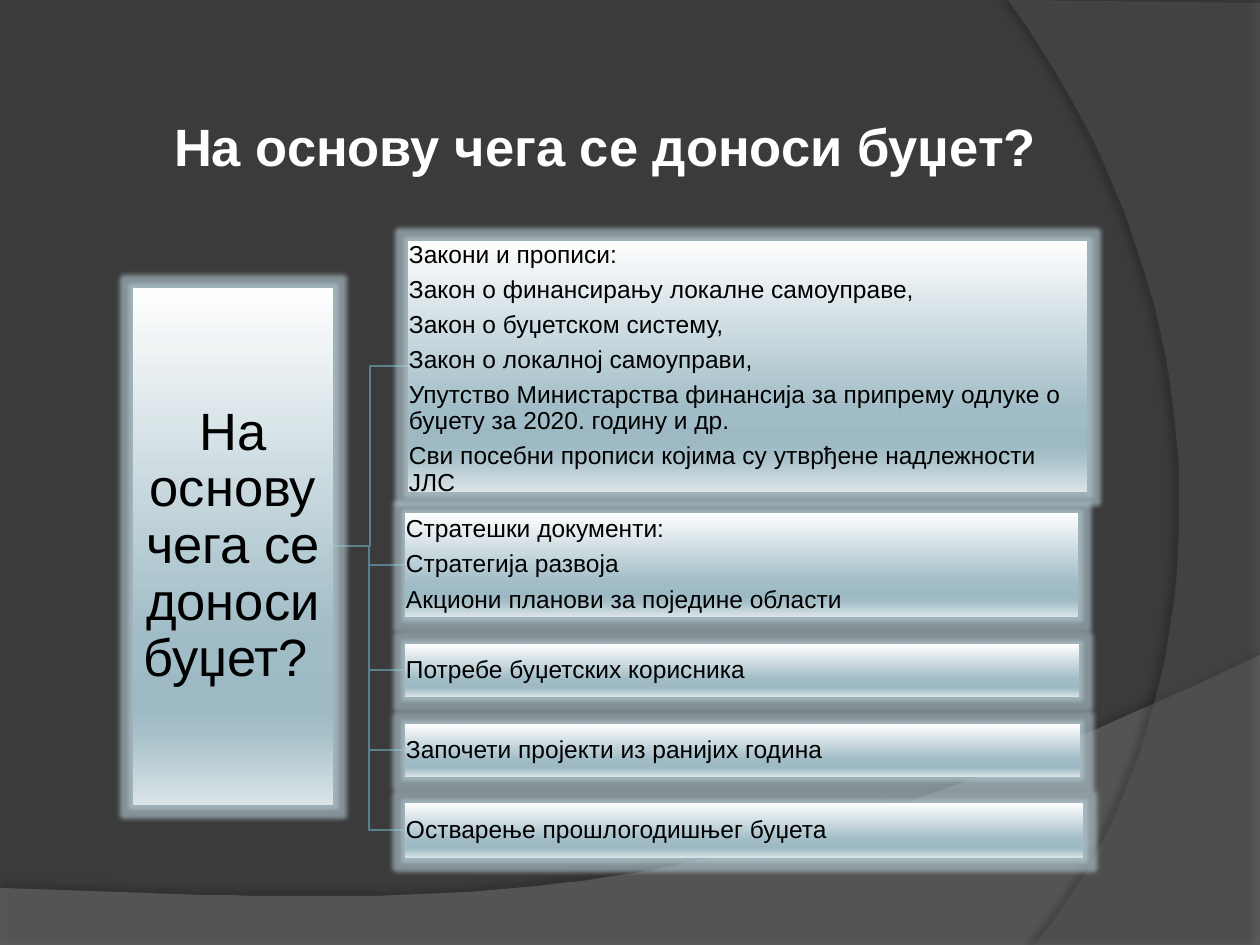
from dataclasses import dataclass

from lxml import etree
from pptx import Presentation
from pptx.dml.color import RGBColor
from pptx.enum import shapes, text
from pptx.oxml import ns
from pptx import util as u

SCALE = 914400 / 126
FONT = "Arial"
GRADIENT = [(0, "FEFEFE"), (68, "A0BCC6"), (81, "9CB9C4"), (86, "A7C0C9"), (100, "DAE4E7")]


@dataclass
class Box:
    left: int
    top: int
    width: int
    height: int
    lines: list[str]
    size: int = 14
    inset: int = 1
    align: text.PP_ALIGN = text.PP_ALIGN.LEFT
    anchor: text.MSO_ANCHOR = text.MSO_ANCHOR.MIDDLE

    @property
    def middle(self) -> int:
        return self.top + self.height // 2


@dataclass
class Swoosh:
    """A background shape: straight corners, then one Bezier curve from the last corner."""
    corners: list[tuple[int, int]]
    curve: list[tuple[int, int]]
    colour: str
    opacity: int
    shadow_opacity: int
    shadow_distance: float
    shadow_angle: int


SWOOSHES = [
    Swoosh([(0, 888), (0, 946), (1260, 946), (1260, 655)],
           [(704, 919), (493, 906), (0, 888)], "7F7F7F", 45, 35, 3.5, 270),
    Swoosh([(1260, 3), (1260, 945), (1034, 945)],
           [(1178, 780), (1283, 378), (1008, 0)], "5E5E5E", 40, 45, 4, 180),
]
TITLE = Box(168, 95, 990, 101, ["На основу чега се доноси буџет?"], size=30, inset=6)
ROOT = Box(133, 288, 200, 517, ["На основу чега се доноси буџет? "], size=30, inset=3,
           align=text.PP_ALIGN.CENTER)
BRANCHES = [
    Box(408, 241, 679, 251, [
        "Закони и прописи:",
        "Закон о финансирању локалне самоуправе,",
        "Закон о буџетском систему,",
        "Закон о локалној самоуправи,",
        "Упутство Министарства финансија за припрему одлуке о буџету за 2020. годину и др.",
        "Сви посебни прописи којима су утврђене надлежности ЈЛС",
    ], anchor=text.MSO_ANCHOR.TOP),
    Box(405, 513, 673, 104, [
        "Стратешки документи:",
        "Стратегија развоја",
        "Акциони планови за поједине области",
    ]),
    Box(405, 644, 674, 53, ["Потребе буџетских корисника"]),
    Box(405, 724, 675, 53, ["Започети пројекти из ранијих година"]),
    Box(405, 803, 678, 55, ["Остварење прошлогодишњег буџета"]),
]


def px(length: float) -> int:
    return round(length * SCALE)


def rgb(colour: str) -> RGBColor:
    return RGBColor.from_string(colour)


def add_xml(parent, tag: str, **attributes):
    child = etree.SubElement(parent, ns.qn(tag))
    for name, value in attributes.items():
        child.set(name, str(value))
    return child


def add_colour(parent, colour: str, opacity: int = 100) -> None:
    node = add_xml(parent, "a:srgbClr", val=colour)
    if opacity < 100:
        add_xml(node, "a:alpha", val=opacity * 1000)


def effects(shape):
    shape.shadow.inherit = False
    return shape._element.spPr.find(ns.qn("a:effectLst"))


def add_path(page, points, closed: bool):
    builder = page.shapes.build_freeform(*points[0], scale=SCALE)
    builder.add_line_segments(points[1:], close=closed)
    return builder.convert_to_shape()


def bezier(start, first, second, end, steps: int = 48):
    for step in range(1, steps + 1):
        t = step / steps
        weights = ((1 - t) ** 3, 3 * t * (1 - t) ** 2, 3 * t * t * (1 - t), t ** 3)
        yield tuple(sum(w * point[axis] for w, point in zip(weights, (start, first, second, end)))
                    for axis in (0, 1))


def draw_swoosh(page, swoosh: Swoosh) -> None:
    points = swoosh.corners + list(bezier(swoosh.corners[-1], *swoosh.curve))
    shape = add_path(page, points, closed=True)
    shape.fill.solid()
    shape.fill.fore_color.rgb = rgb(swoosh.colour)
    solid = shape._element.spPr.find(ns.qn("a:solidFill"))
    add_xml(solid[0], "a:alpha", val=swoosh.opacity * 1000)
    shape.line.fill.background()
    shadow = add_xml(effects(shape), "a:outerShdw", blurRad=u.Pt(4),
                     dist=u.Pt(swoosh.shadow_distance), dir=swoosh.shadow_angle * 60000)
    add_colour(shadow, "000000", swoosh.shadow_opacity)


def draw_link(page, root: Box, branch: Box) -> None:
    start = root.left + root.width
    bend = (start + branch.left) // 2
    link = add_path(page, [(start, root.middle), (bend, root.middle),
                           (bend, branch.middle), (branch.left, branch.middle)], closed=False)
    link.fill.background()
    link.line.color.rgb = rgb("58808D")
    link.line.width = u.Pt(1.5)
    effects(link)


def write(shape, box: Box, colour: str, bold: bool, para_format: dict) -> None:
    frame = shape.text_frame
    margins = dict.fromkeys(("margin_left", "margin_top", "margin_right", "margin_bottom"),
                            px(box.inset))
    for name, value in {**margins, "word_wrap": True, "vertical_anchor": box.anchor}.items():
        setattr(frame, name, value)
    for index, line in enumerate(box.lines):
        para = frame.paragraphs[0] if index == 0 else frame.add_paragraph()
        for name, value in {"alignment": box.align, **para_format}.items():
            setattr(para, name, value)
        span = para.add_run()
        span.text = line
        for name, value in {"name": FONT, "size": u.Pt(box.size), "bold": bold}.items():
            setattr(span.font, name, value)
        span.font.color.rgb = rgb(colour)


def place(box: Box) -> list[int]:
    return [px(value) for value in (box.left, box.top, box.width, box.height)]


def draw_box(page, box: Box) -> None:
    shape = page.shapes.add_shape(shapes.MSO_SHAPE.RECTANGLE, *place(box))
    shape.fill.gradient()
    shape.fill.gradient_angle = 270
    stops = shape._element.spPr.find(ns.qn("a:gradFill")).find(ns.qn("a:gsLst"))
    for stop in list(stops):
        stops.remove(stop)
    for position, colour in GRADIENT:
        add_colour(add_xml(stops, "a:gs", pos=position * 1000), colour)
    shape.line.fill.background()
    add_colour(add_xml(effects(shape), "a:glow", rad=u.Pt(5)), "B5CBD3", 60)
    write(shape, box, "000000", False, {"line_spacing": 0.9, "space_after": u.Pt(box.size * 0.35)})


def main() -> None:
    deck = Presentation()
    deck.slide_width, deck.slide_height = px(1260), px(945)
    page = deck.slides.add_slide(deck.slide_layouts[6])
    page.background.fill.solid()
    page.background.fill.fore_color.rgb = rgb("3B3B3B")
    for swoosh in SWOOSHES:
        draw_swoosh(page, swoosh)
    write(page.shapes.add_textbox(*place(TITLE)), TITLE, "FFFFFF", True, {})
    for branch in reversed(BRANCHES):
        draw_link(page, ROOT, branch)
    for box in [ROOT, *BRANCHES]:
        draw_box(page, box)
    deck.save("out.pptx")


if __name__ == "__main__":
    main()
